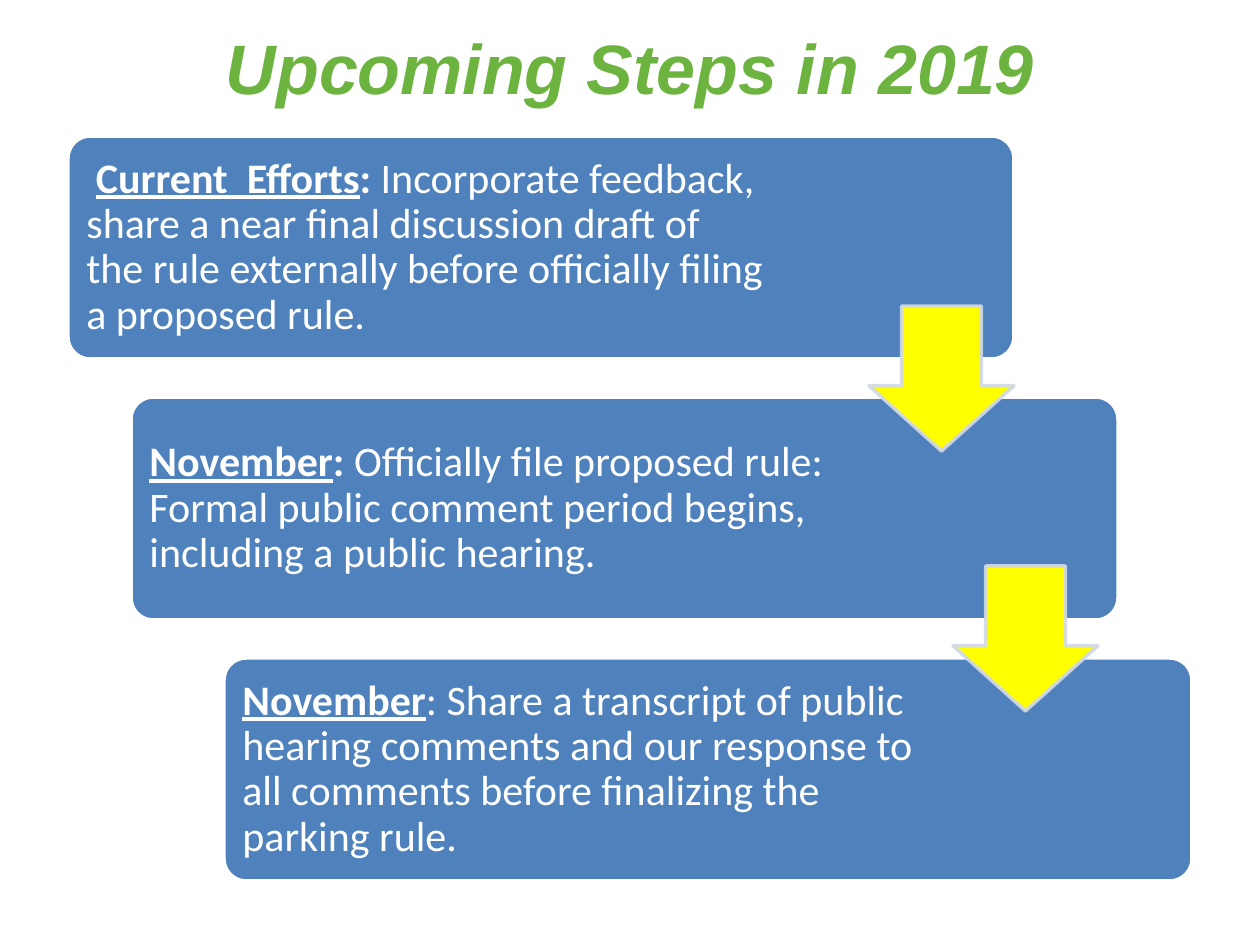
import pptx
import pptx.util
import pptx.dml.color
import pptx.enum.shapes
import pptx.enum.text
import pptx.oxml.ns
import lxml.etree

SCALE = 914400 / 126  # EMU in one px
KIND = pptx.enum.shapes.MSO_SHAPE
ALIGN = pptx.enum.text.PP_ALIGN
ANCHOR = pptx.enum.text.MSO_ANCHOR

# left, width, text width, runs as (words, bold, underlined)
STEPS = [
    (68, 946, 704, [
        (" ", True, False), ("Current  Efforts", True, True), (": ", True, False),
        ("Incorporate feedback, share a near final discussion draft of the rule "
         "externally before officially filing a proposed rule.", False, False)]),
    (131, 987, 735, [
        ("November", True, True), (": ", True, False),
        ("Officially file proposed rule: Formal public comment period begins, "
         "including a public hearing.", False, False)]),
    (224, 968, 719, [
        ("November", True, True),
        (": Share a transcript of public hearing comments and our response to all "
         "comments before finalizing the parking rule.", False, False)]),
]
TOP, HIGH, PITCH, INSET = 136, 223, 261, 6
ARROWS = [(869, 306), (953, 566)]


def px(num):
    return pptx.util.Emu(round(num * SCALE))


def color(code):
    return pptx.dml.color.RGBColor.from_string(code)


def put_text(para, words, size=24, face="Calibri", ink="FFFFFF",
             bold=False, under=False, slant=False):
    run = para.add_run()
    run.text = words
    font = run.font
    font.size, font.name = pptx.util.Pt(size), face
    font.bold, font.italic, font.underline = bold, slant, under
    font.color.rgb = color(ink)


def add_title(slide, words):
    title = slide.shapes.title
    title.left, title.top, title.width, title.height = map(px, (63, 10, 1134, 126))
    frame = title.text_frame
    frame.vertical_anchor = ANCHOR.TOP
    frame.margin_top = px(14)
    para = frame.paragraphs[0]
    para.alignment = ALIGN.CENTER
    put_text(para, words, size=40, face="Arial", ink="6DB33F", bold=True, slant=True)


def add_form(slide, kind, box, fill, line, adjust):
    form = slide.shapes.add_shape(kind, *map(px, box))
    form.shadow.inherit = False
    form.fill.solid()
    form.fill.fore_color.rgb = color(fill)
    form.line.color.rgb = color(line)
    form.line.width = pptx.util.Pt(2)
    for spot, value in enumerate(adjust):
        form.adjustments[spot] = value
    return form


def add_step(slide, left, top, width, span, runs):
    add_form(slide, KIND.ROUNDED_RECTANGLE, (left, top, width, HIGH),
             "4F81BD", "FFFFFF", [0.1])
    box = slide.shapes.add_textbox(
        *map(px, (left + INSET, top + INSET, span, HIGH - 2 * INSET)))
    frame = box.text_frame
    frame.word_wrap = True
    frame.vertical_anchor = ANCHOR.MIDDLE
    frame.margin_left = frame.margin_right = pptx.util.Inches(0.1)
    frame.margin_top = frame.margin_bottom = pptx.util.Inches(0.1)
    para = frame.paragraphs[0]
    para.line_spacing = 0.9
    for words, bold, under in runs:
        put_text(para, words, bold=bold, under=under)


def add_arrow(slide, left, top):
    arrow = add_form(slide, KIND.DOWN_ARROW, (left, top, 145, 145),
                     "FFFF00", "D0D8E8", [0.55, 0.45])
    # Outline at 90% opacity
    qn = pptx.oxml.ns.qn
    tint = arrow.line._get_or_add_ln().find(".//" + qn("a:srgbClr"))
    lxml.etree.SubElement(tint, qn("a:alpha")).set("val", "90000")


def main():
    deck = pptx.Presentation()
    deck.slide_width, deck.slide_height = px(1260), px(945)
    slide = deck.slides.add_slide(deck.slide_layouts[5])

    add_title(slide, "Upcoming Steps in 2019")

    # Staggered steps
    for row, (left, width, span, runs) in enumerate(STEPS):
        add_step(slide, left, TOP + row * PITCH, width, span, runs)

    # Arrows between the steps
    for left, top in ARROWS:
        add_arrow(slide, left, top)

    deck.save("out.pptx")


if __name__ == "__main__":
    main()
